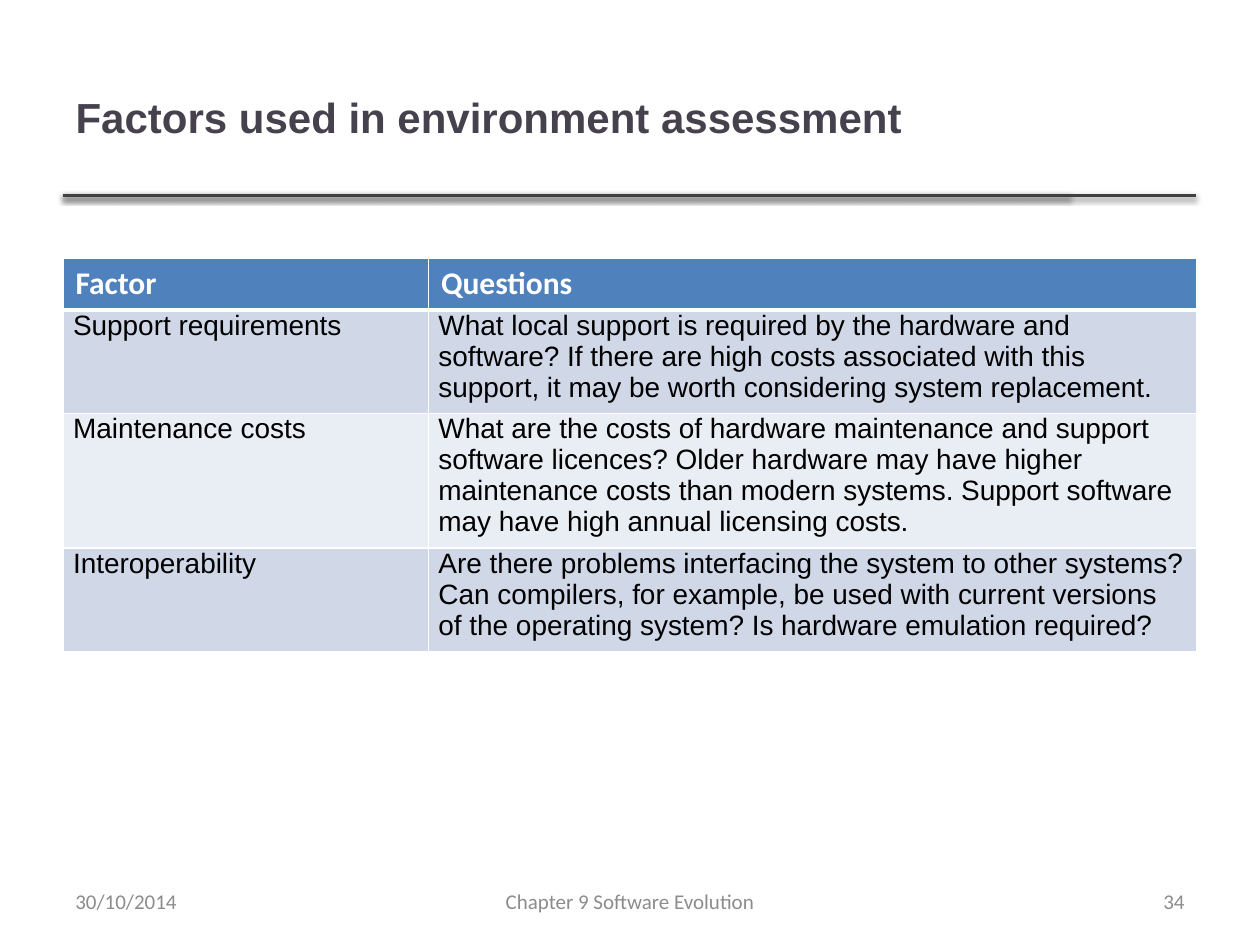
from lxml import etree
from pptx import Presentation
from pptx.dml.color import RGBColor
from pptx.enum.shapes import MSO_CONNECTOR
from pptx.enum.text import MSO_ANCHOR, PP_ALIGN
from pptx.oxml import parse_xml
from pptx.oxml.ns import nsdecls
from pptx.util import Inches, Pt

STRAIGHT = MSO_CONNECTOR.STRAIGHT
MIDDLE = MSO_ANCHOR.MIDDLE
LEFT, CENTER, RIGHT = PP_ALIGN.LEFT, PP_ALIGN.CENTER, PP_ALIGN.RIGHT

TITLE_COLOR = RGBColor(0x46, 0x42, 0x4D)
RULE_COLOR = RGBColor(0x40, 0x40, 0x40)
FOOTER_COLOR = RGBColor(0x8C, 0x8C, 0x8C)
HEADER_FILL = RGBColor(0x4F, 0x81, 0xBD)
BAND_FILLS = [RGBColor(0xD0, 0xD8, 0xE8), RGBColor(0xE9, 0xED, 0xF4)]
WHITE = RGBColor(0xFF, 0xFF, 0xFF)
BLACK = RGBColor(0, 0, 0)

TITLE = "Factors used in environment assessment"
FACTORS = [
    ("Factor", "Questions"),
    ("Support requirements",
     "What local support is required by the hardware and software? If there are "
     "high costs associated with this support, it may be worth considering system "
     "replacement."),
    ("Maintenance costs",
     "What are the costs of hardware maintenance and support software licences? "
     "Older hardware may have higher maintenance costs than modern systems. Support "
     "software may have high annual licensing costs."),
    ("Interoperability",
     "Are there problems interfacing the system to other systems? Can compilers, for "
     "example, be used with current versions of the operating system? Is hardware "
     "emulation required?"),
]
SLIDE_W, SLIDE_H = 10, 7.5
MARGIN = 0.5
CONTENT_W = SLIDE_W - 2 * MARGIN
RULE_Y = 1.55
RULE_ENDS = [8.49, 9.49]
TABLE_TOP = 2.05
ROW_H = 0.41
FACTOR_W = 2.9
FOOTER_TOP, FOOTER_H = 6.95, 0.4
SIDE_W, CENTER_W = 2.33, 3.17
FOOTERS = [
    ("30/10/2014", MARGIN, SIDE_W, LEFT),
    ("Chapter 9 Software Evolution", (SLIDE_W - CENTER_W) / 2, CENTER_W, CENTER),
    ("34", SLIDE_W - MARGIN - SIDE_W, SIDE_W, RIGHT),
]


def write(frame, text, font, size, color, bold=False, align=LEFT):
    paragraph = frame.paragraphs[0]
    paragraph.alignment = align
    run = paragraph.add_run()
    run.text = text
    run.font.name = font
    run.font.size = Pt(size)
    run.font.bold = bold
    run.font.color.rgb = color
    return paragraph


def add_rule(slide, end):
    rule = slide.shapes.add_connector(
        STRAIGHT, Inches(MARGIN), Inches(RULE_Y), Inches(end), Inches(RULE_Y))
    rule.line.color.rgb = RULE_COLOR
    rule.line.width = Pt(2)
    rule._element.spPr.append(parse_xml(
        f'<a:effectLst {nsdecls("a")}>'
        f'<a:outerShdw blurRad="{Pt(3.1)}" dist="{Pt(1.6)}" dir="5400000" rotWithShape="0">'
        '<a:srgbClr val="000000"><a:alpha val="38000"/></a:srgbClr>'
        '</a:outerShdw></a:effectLst>'))


def set_borders(cell, bottom):
    """Give a cell white 1 pt borders, with its own bottom width."""
    properties = cell._tc.get_or_add_tcPr()
    for side, width in (("L", 1), ("R", 1), ("T", 1), ("B", bottom)):
        properties.append(etree.fromstring(
            f'<a:ln{side} {nsdecls("a")} w="{Pt(width)}"><a:solidFill>'
            f'<a:srgbClr val="{WHITE}"/></a:solidFill></a:ln{side}>'))


def add_factor_table(slide):
    table = slide.shapes.add_table(
        len(FACTORS), 2, Inches(MARGIN), Inches(TABLE_TOP),
        Inches(CONTENT_W), Inches(ROW_H * len(FACTORS))).table
    table.columns[0].width = Inches(FACTOR_W)
    table.columns[1].width = Inches(CONTENT_W - FACTOR_W)
    for row, texts in enumerate(FACTORS):
        for column, text in enumerate(texts):
            cell = table.cell(row, column)
            set_borders(cell, bottom=1 if row else 3)
            cell.fill.solid()
            if row == 0:
                cell.fill.fore_color.rgb = HEADER_FILL
                write(cell.text_frame, text, "Calibri", 18, WHITE, bold=True)
                continue
            cell.fill.fore_color.rgb = BAND_FILLS[(row - 1) % 2]
            cell.margin_left = cell.margin_right = cell.margin_bottom = Inches(0.08)
            cell.margin_top = 0
            write(cell.text_frame, text, "Arial", 16, BLACK).space_after = Pt(6)


def main():
    deck = Presentation()
    deck.slide_width, deck.slide_height = Inches(SLIDE_W), Inches(SLIDE_H)
    slide = deck.slides.add_slide(deck.slide_layouts[5])

    title = slide.shapes.title
    title.left, title.top = Inches(MARGIN), Inches(0.3)
    title.width, title.height = Inches(7.98), Inches(1.25)
    title.text_frame.vertical_anchor = MIDDLE
    write(title.text_frame, TITLE, "Arial", 24, TITLE_COLOR, bold=True)

    for end in RULE_ENDS:
        add_rule(slide, end)
    add_factor_table(slide)

    for text, left, width, align in FOOTERS:
        frame = slide.shapes.add_textbox(
            Inches(left), Inches(FOOTER_TOP), Inches(width), Inches(FOOTER_H)).text_frame
        frame.word_wrap = True
        frame.vertical_anchor = MIDDLE
        write(frame, text, "Calibri", 12, FOOTER_COLOR, align=align)

    deck.save("out.pptx")


if __name__ == "__main__":
    main()
